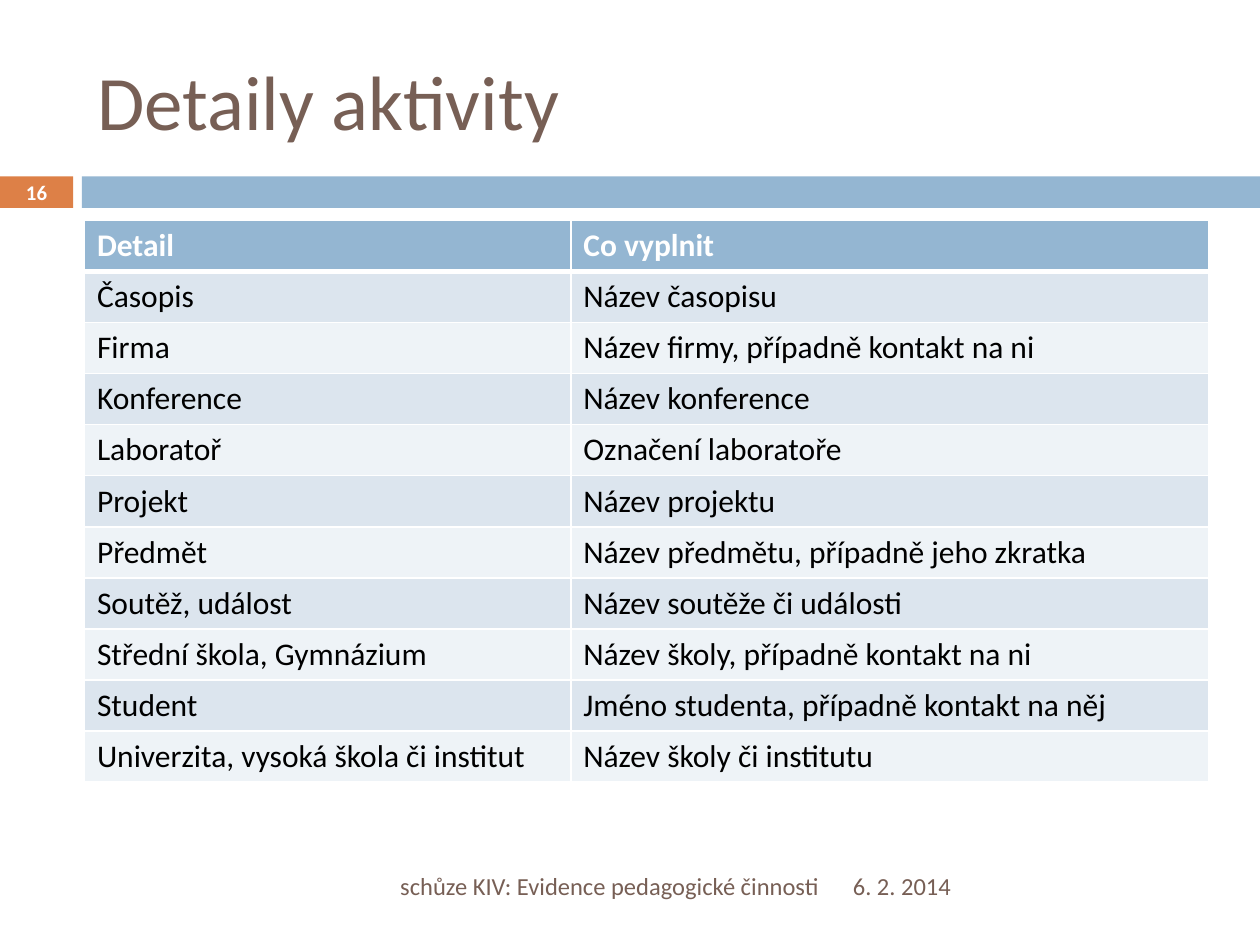
import pptx
import pptx.util
import pptx.dml.color
import pptx.enum.shapes
import pptx.enum.text
import pptx.oxml
import lxml.etree

Inches, Pt = pptx.util.Inches, pptx.util.Pt
ALIGN = pptx.enum.text.PP_ALIGN
COLORS = {
    "brown": "775F55", "orange": "DD8047", "blue": "94B6D2", "white": "FFFFFF",
    "black": "000000", "band_dark": "DCE5EE", "band_light": "EEF3F7",
}
ROWS = [
    ("Detail", "Co vyplnit"),
    ("Časopis", "Název časopisu"),
    ("Firma", "Název firmy, případně kontakt na ni"),
    ("Konference", "Název konference"),
    ("Laboratoř", "Označení laboratoře"),
    ("Projekt", "Název projektu"),
    ("Předmět", "Název předmětu, případně jeho zkratka"),
    ("Soutěž, událost", "Název soutěže či události"),
    ("Střední škola, Gymnázium", "Název školy, případně kontakt na ni"),
    ("Student", "Jméno studenta, případně kontakt na něj"),
    ("Univerzita, vysoká škola či institut", "Název školy či institutu"),
]
# Content column and table grid, in inches
LEFT, WIDTH = 0.67, 8.92
COLS = (3.86, 5.06)
TABLE_TOP, TABLE_HEIGHT = 1.75, 4.46


def rgb(name):
    return pptx.dml.color.RGBColor.from_string(COLORS[name])


def write(tf, text, size=18, color="black", bold=False, align=ALIGN.LEFT,
          anchor=pptx.enum.text.MSO_ANCHOR.MIDDLE):
    tf.word_wrap = True
    tf.vertical_anchor = anchor
    p = tf.paragraphs[0]
    p.alignment = align
    r = p.add_run()
    r.text = text
    r.font.name, r.font.size, r.font.bold = "Calibri", Pt(size), bold
    r.font.color.rgb = rgb(color)


prs = pptx.Presentation()
prs.slide_width, prs.slide_height = Inches(10), Inches(7.5)
s = prs.slides.add_slide(prs.slide_layouts[5])

# Bars under the title
for x, w, color in [(0, 0.58, "orange"), (0.65, 9.35, "blue")]:
    sp = s.shapes.add_shape(pptx.enum.shapes.MSO_SHAPE.RECTANGLE,
                            Inches(x), Inches(1.4), Inches(w), Inches(0.25))
    sp.shadow.inherit = False
    sp.fill.solid()
    sp.fill.fore_color.rgb = rgb(color)
    sp.line.fill.background()

# Title
title = s.shapes.title
title.left, title.top = Inches(LEFT), Inches(0.25)
title.width, title.height = Inches(WIDTH), Inches(1.08)
write(title.text_frame, "Detaily aktivity", size=44, color="brown")

# Date, footer and slide number
for x, y, w, h, text, fmt in [
    (6.67, 6.83, 2.92, 0.4, "6. 2. 2014", dict(size=14, color="brown")),
    (LEFT, 6.83, 5.93, 0.4, "schůze KIV: Evidence pedagogické činnosti",
     dict(size=14, color="brown", align=ALIGN.RIGHT)),
    (0, 1.39, 0.58, 0.27, "16",
     dict(size=11.9, color="white", bold=True, align=ALIGN.CENTER)),
]:
    tf = s.shapes.add_textbox(Inches(x), Inches(y), Inches(w), Inches(h)).text_frame
    if h < 0.3:
        tf.margin_left = tf.margin_right = tf.margin_top = tf.margin_bottom = 0
    write(tf, text, **fmt)

# Table: blue header, alternating bands, white rules
table = s.shapes.add_table(len(ROWS), len(COLS), Inches(LEFT), Inches(TABLE_TOP),
                           Inches(WIDTH), Inches(TABLE_HEIGHT)).table
for col, w in zip(table.columns, COLS):
    col.width = Inches(w)
for i, row in enumerate(ROWS):
    header = i == 0
    fill = "blue" if header else ("band_dark" if i % 2 else "band_light")
    for j, text in enumerate(row):
        cell = table.cell(i, j)
        write(cell.text_frame, text, color="white" if header else "black",
              bold=header, anchor=None)
        tcPr = cell._tc.get_or_add_tcPr()
        for side in "LRTB":
            thick = (header and side == "B") or (i == 1 and side == "T")
            ln = lxml.etree.SubElement(tcPr, pptx.oxml.ns.qn(f"a:ln{side}"),
                                       w=str(Pt(3 if thick else 1)))
            solid = lxml.etree.SubElement(ln, pptx.oxml.ns.qn("a:solidFill"))
            lxml.etree.SubElement(solid, pptx.oxml.ns.qn("a:srgbClr"),
                                  val=COLORS["white"])
        cell.fill.solid()
        cell.fill.fore_color.rgb = rgb(fill)

prs.save("out.pptx")
